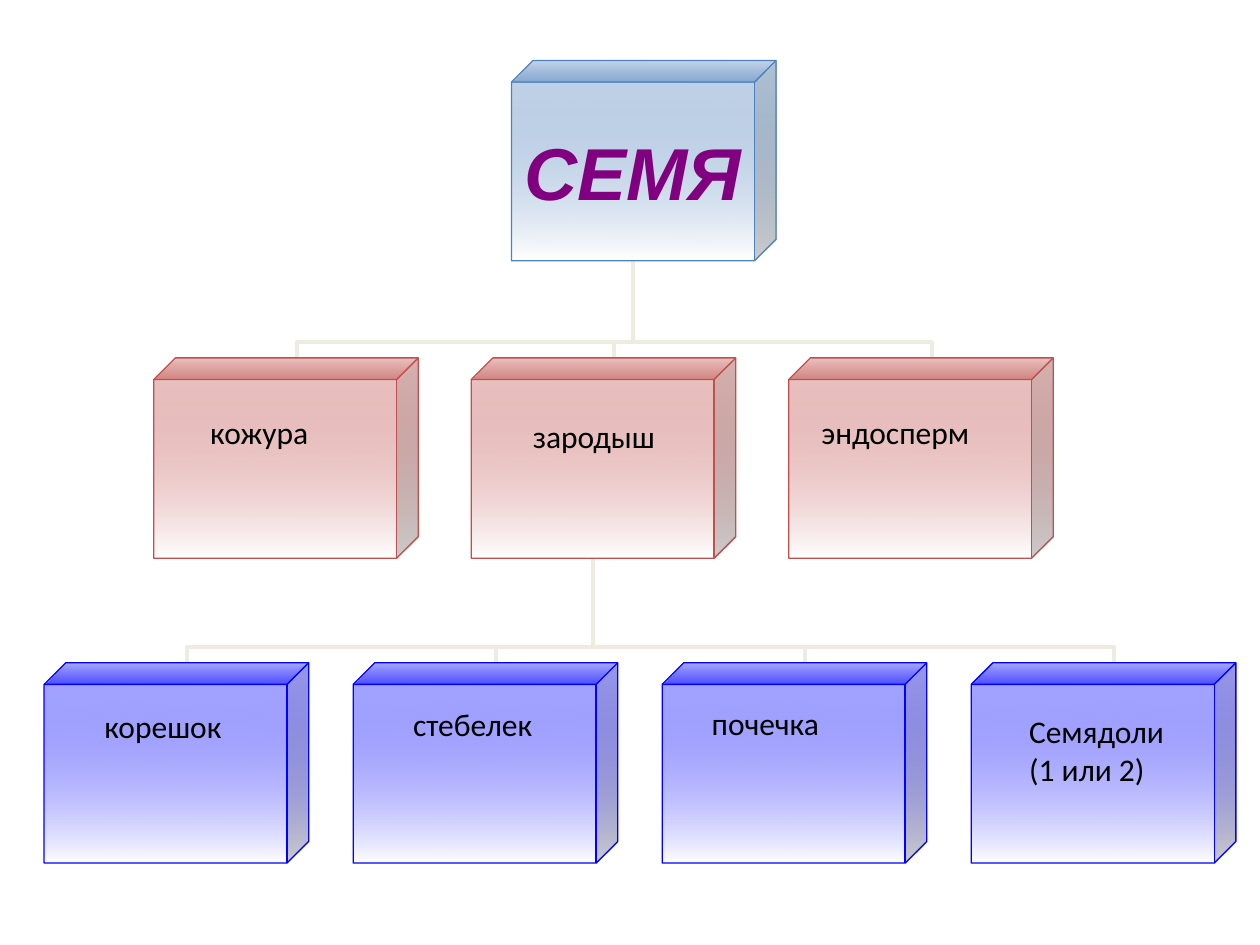
import pptx
import pptx.util
import pptx.dml.color
import pptx.enum.shapes
import pptx.enum.text
import pptx.oxml.ns
from lxml import etree
from pptx.util import Inches

COLORS = {
    "seed": "4F81BD",
    "part": "C0504D",
    "organ": "0000FF",
    "fade": "FFFFFF",
    "branch": "EEECE1",
    "heading": "800080",
    "label": "000000",
}
CUBE_WIDTH, CUBE_HEIGHT, CUBE_DEPTH = 2.1, 1.59, 0.108
SLANT = CUBE_DEPTH * CUBE_HEIGHT
FRONT_MIDDLE = (CUBE_WIDTH - SLANT) / 2
ROOT_LEFT, ROOT_TOP = 4.06, 0.48
PARTS_LEFT, PARTS_TOP, PARTS_STEP = 1.22, 2.84, 2.52
ORGANS_LEFT, ORGANS_TOP, ORGANS_STEP = 0.35, 5.26, 2.453

PART_LABELS = [
    ("кожура", 1.57, 3.23, 0.99, 0.4),
    ("зародыш", 4.13, 3.26, 1.18, 0.4),
    ("эндосперм", 6.42, 3.23, 1.39, 0.4),
]
ORGAN_LABELS = [
    ("корешок", 0.73, 5.56, 1.14, 0.4),
    ("стебелек", 3.18, 5.55, 1.16, 0.4),
    ("почечка", 5.55, 5.54, 1.07, 0.4),
    ("Семядоли\n(1 или 2)", 8.07, 5.6, 1.34, 0.71),
]


def rgb(name):
    return pptx.dml.color.RGBColor.from_string(COLORS[name])


def add_xml(parent, tag, **attributes):
    return etree.SubElement(parent, pptx.oxml.ns.qn(tag), **attributes)


def add_branch(slide, child_left, child_top, parent_left, parent_top, bend):
    child_x = child_left + FRONT_MIDDLE + SLANT
    parent_x = parent_left + FRONT_MIDDLE
    parent_bottom = parent_top + CUBE_HEIGHT
    rise, spread = child_top - parent_bottom, abs(child_x - parent_x)
    left = (child_x + parent_x - rise) / 2
    top = (child_top + parent_bottom - spread) / 2
    on_right = child_x > parent_x
    start, end = (left + rise, left) if on_right else (left, left + rise)
    branch = slide.shapes.add_connector(
        pptx.enum.shapes.MSO_CONNECTOR.ELBOW,
        Inches(start), Inches(top), Inches(end), Inches(top + spread))
    branch.line.color.rgb = rgb("branch")
    branch.line.width = pptx.util.Pt(2.25)
    properties = branch._element.spPr
    properties.find(pptx.oxml.ns.qn("a:xfrm")).set(
        "rot", str((90 if on_right else 270) * 60000))
    geometry = properties.find(pptx.oxml.ns.qn("a:prstGeom"))
    guides = geometry.find(pptx.oxml.ns.qn("a:avLst"))
    if guides is None:
        guides = add_xml(geometry, "a:avLst")
    add_xml(guides, "a:gd", name="adj1", fmla=f"val {round(bend * 100000)}")
    add_xml(properties, "a:effectLst")


def add_cube(slide, left, top, color):
    cube = slide.shapes.add_shape(
        pptx.enum.shapes.MSO_SHAPE.CUBE, Inches(left), Inches(top),
        Inches(CUBE_WIDTH), Inches(CUBE_HEIGHT))
    cube.adjustments[0] = CUBE_DEPTH
    cube.shadow.inherit = False
    cube.fill.gradient()
    cube.fill.gradient_angle = 270
    for stop, name, position in zip(cube.fill.gradient_stops, (color, "fade"), (0, 1)):
        stop.color.rgb = rgb(name)
        stop.position = position
    tint = cube._element.spPr.find(".//" + pptx.oxml.ns.qn("a:srgbClr"))
    add_xml(tint, "a:alpha", val="40000")
    cube.line.color.rgb = rgb(color)
    cube.line.width = pptx.util.Pt(0.75)
    return cube


def format_text(frame, font_name, size, color, emphasized=False):
    for paragraph in frame.paragraphs:
        for run in paragraph.runs:
            run.font.name = font_name
            run.font.size = pptx.util.Pt(size)
            run.font.color.rgb = rgb(color)
            run.font.bold = run.font.italic = emphasized


def add_heading(cube, text):
    frame = cube.text_frame
    frame.text = text
    frame.word_wrap = False
    frame.margin_left = frame.margin_right = frame.margin_top = frame.margin_bottom = 0
    frame.vertical_anchor = pptx.enum.text.MSO_ANCHOR.MIDDLE
    frame.paragraphs[0].alignment = pptx.enum.text.PP_ALIGN.CENTER
    format_text(frame, "Arial", 42, "heading", emphasized=True)


def add_label(slide, text, left, top, width, height):
    label = slide.shapes.add_textbox(
        Inches(left), Inches(top), Inches(width), Inches(height))
    frame = label.text_frame
    frame.text = text
    frame.word_wrap = False
    frame.auto_size = pptx.enum.text.MSO_AUTO_SIZE.SHAPE_TO_FIT_TEXT
    format_text(frame, "Calibri", 18, "label")


def main():
    presentation = pptx.Presentation()
    presentation.slide_width = Inches(10)
    presentation.slide_height = Inches(7.5)
    slide = presentation.slides.add_slide(presentation.slide_layouts[6])

    part_lefts = [PARTS_LEFT + i * PARTS_STEP for i in range(len(PART_LABELS))]
    organ_lefts = [ORGANS_LEFT + i * ORGANS_STEP for i in range(len(ORGAN_LABELS))]
    embryo_left = part_lefts[1]

    for left in organ_lefts:
        add_branch(slide, left, ORGANS_TOP, embryo_left, PARTS_TOP, 0.15)
    for left in part_lefts:
        add_branch(slide, left, PARTS_TOP, ROOT_LEFT, ROOT_TOP, 0.16)

    add_heading(add_cube(slide, ROOT_LEFT, ROOT_TOP, "seed"), "СЕМЯ")
    for left in part_lefts:
        add_cube(slide, left, PARTS_TOP, "part")
    for left in organ_lefts:
        add_cube(slide, left, ORGANS_TOP, "organ")
    for label in PART_LABELS + ORGAN_LABELS:
        add_label(slide, *label)

    presentation.save("out.pptx")


if __name__ == "__main__":
    main()
